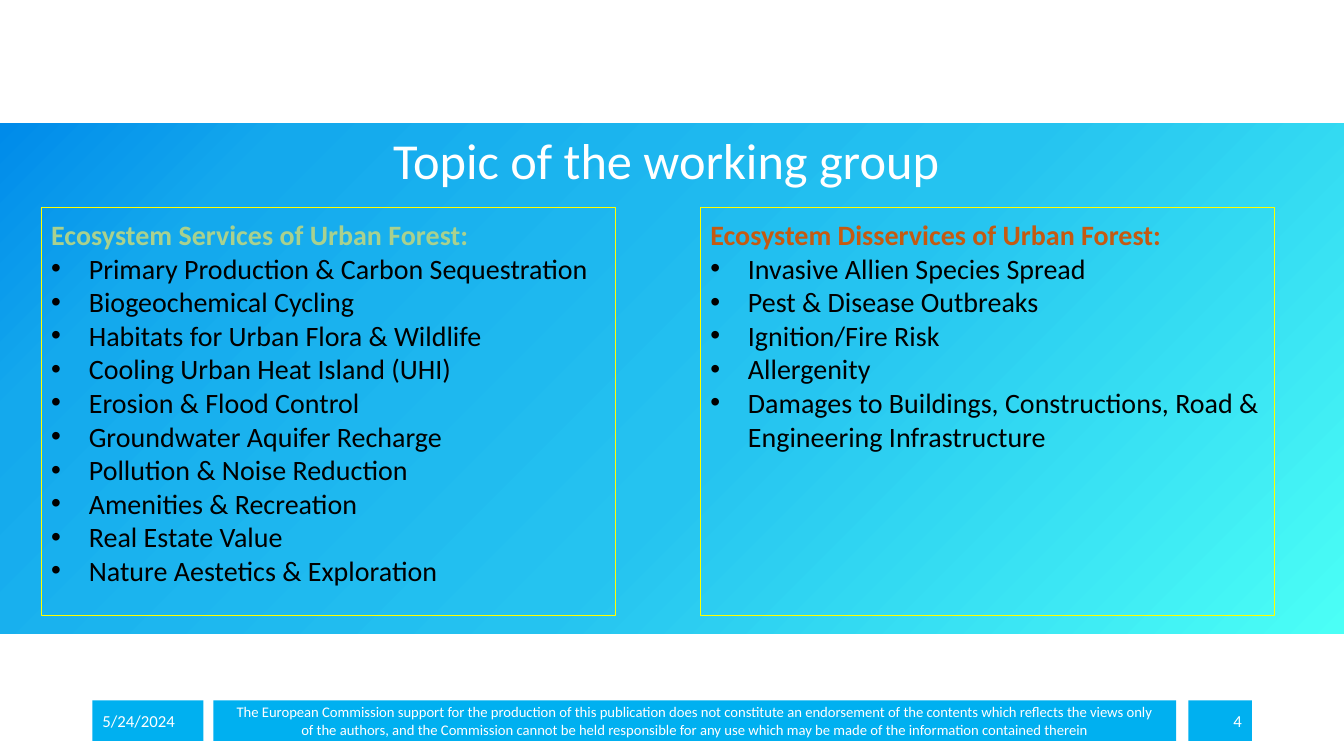
from lxml import etree
from pptx import Presentation
from pptx import util as u
from pptx.dml.color import RGBColor
from pptx.enum import shapes, text
from pptx.oxml import ns

COLORS = {"white": "FFFFFF", "black": "000000", "bar": "00B0F0",
          "frame": "FFFF00", "good": "A9D18E", "bad": "C55A11"}
STOPS = [(0, "4BFFF6"), (44, "25C3F0"), (84, "14A9ED"), (100, "008BEA")]
LEFT, CENTER, RIGHT = text.PP_ALIGN.LEFT, text.PP_ALIGN.CENTER, text.PP_ALIGN.RIGHT


def rgb(name):
    return RGBColor.from_string(COLORS[name])


def child(parent, tag, **attrs):
    return etree.SubElement(parent, ns.qn(tag), **attrs)


class Deck:
    face = "Calibri"

    def __init__(self, wide, high):
        self.prs = Presentation()
        self.prs.slide_width, self.prs.slide_height = u.Cm(wide), u.Cm(high)
        self.slide = self.prs.slides.add_slide(self.prs.slide_layouts[5])

    def style(self, para, size, color, align=LEFT, bold=False):
        para.alignment = align
        font = para.font
        font.name, font.size, font.bold = self.face, u.Pt(size), bold
        font.color.rgb = rgb(color)

    def box(self, *place):
        shape = self.slide.shapes.add_shape(
            shapes.MSO_SHAPE.RECTANGLE, *map(u.Cm, place))
        shape.shadow.inherit = False
        shape.line.fill.background()
        return shape

    def band(self, *place):
        """Gradient strip behind everything else."""
        shape = self.box(*place)
        shape.fill.gradient()
        shape.fill.gradient_angle = 135
        stops = shape._element.spPr.find(".//" + ns.qn("a:gsLst"))
        for old in list(stops):
            stops.remove(old)
        for pos, color in STOPS:
            stop = child(stops, "a:gs", pos=str(pos * 1000))
            child(stop, "a:srgbClr", val=color)
        self.slide.shapes._spTree.insert(2, shape._element)

    def title(self, words, *place):
        shape = self.slide.shapes.title
        shape.left, shape.top, shape.width, shape.height = map(u.Cm, place)
        frame = shape.text_frame
        frame.text = words
        frame.auto_size = text.MSO_AUTO_SIZE.NONE
        frame.vertical_anchor = text.MSO_ANCHOR.BOTTOM
        para = frame.paragraphs[0]
        para.line_spacing = 0.9
        self.style(para, 36, "white", CENTER)

    def footer(self, words, left, width, size, align):
        shape = self.box(left, 17.65, width, 1.02)
        shape.fill.solid()
        shape.fill.fore_color.rgb = rgb("bar")
        frame = shape.text_frame
        frame.text = words
        frame.vertical_anchor = text.MSO_ANCHOR.MIDDLE
        for para in frame.paragraphs:
            self.style(para, size, "white", align)

    def panel(self, left, head, color, items):
        """Framed list with a coloured heading."""
        shape = self.box(left, 5.23, 14.48, 10.29)
        shape.fill.background()
        shape.line.color.rgb = rgb("frame")
        shape.line.width = u.Pt(0.75)
        frame = shape.text_frame
        frame.margin_top = frame.margin_bottom = u.Cm(0.25)
        frame.vertical_anchor = text.MSO_ANCHOR.TOP
        frame.text = "\n".join([head, *items])
        first, *rest = frame.paragraphs
        self.style(first, 20, color, bold=True)
        for para in rest:
            props = para._p.get_or_add_pPr()
            props.set("marL", str(u.Cm(0.95)))
            props.set("indent", str(-u.Cm(0.95)))
            child(props, "a:buFont", typeface="Arial")
            child(props, "a:buChar", char="•")
            self.style(para, 20, "black")


def main():
    deck = Deck(33.87, 19.05)

    # Background band and title
    deck.band(0, 3.12, 33.87, 12.85)
    deck.title("Topic of the working group ", 2.33, 3.12, 29.21, 1.8)

    # Footer bar
    deck.footer("5/24/2024", 2.33, 2.8, 12, LEFT)
    deck.footer(
        "The European Commission support for the production of this publication "
        "does not constitute an endorsement of the contents which reflects the "
        "views only\n"
        "of the authors, and the Commission cannot be held responsible for any "
        "use which may be made of the information contained therein",
        5.38, 24.26, 10.5, CENTER)
    deck.footer("4", 29.95, 1.6, 12, RIGHT)

    # Two lists
    deck.panel(1.04, "Ecosystem Services of Urban Forest:", "good", [
        "Primary Production & Carbon Sequestration",
        "Biogeochemical Cycling",
        "Habitats for Urban Flora & Wildlife",
        "Cooling Urban Heat Island (UHI)",
        "Erosion & Flood Control",
        "Groundwater Aquifer Recharge",
        "Pollution & Noise Reduction",
        "Amenities & Recreation",
        "Real Estate Value",
        "Nature Aestetics & Exploration"])
    deck.panel(17.65, "Ecosystem Disservices of Urban Forest:", "bad", [
        "Invasive Allien Species Spread",
        "Pest & Disease Outbreaks",
        "Ignition/Fire Risk",
        "Allergenity",
        "Damages to Buildings, Constructions, Road & Engineering Infrastructure"])

    deck.prs.save("out.pptx")


if __name__ == "__main__":
    main()
